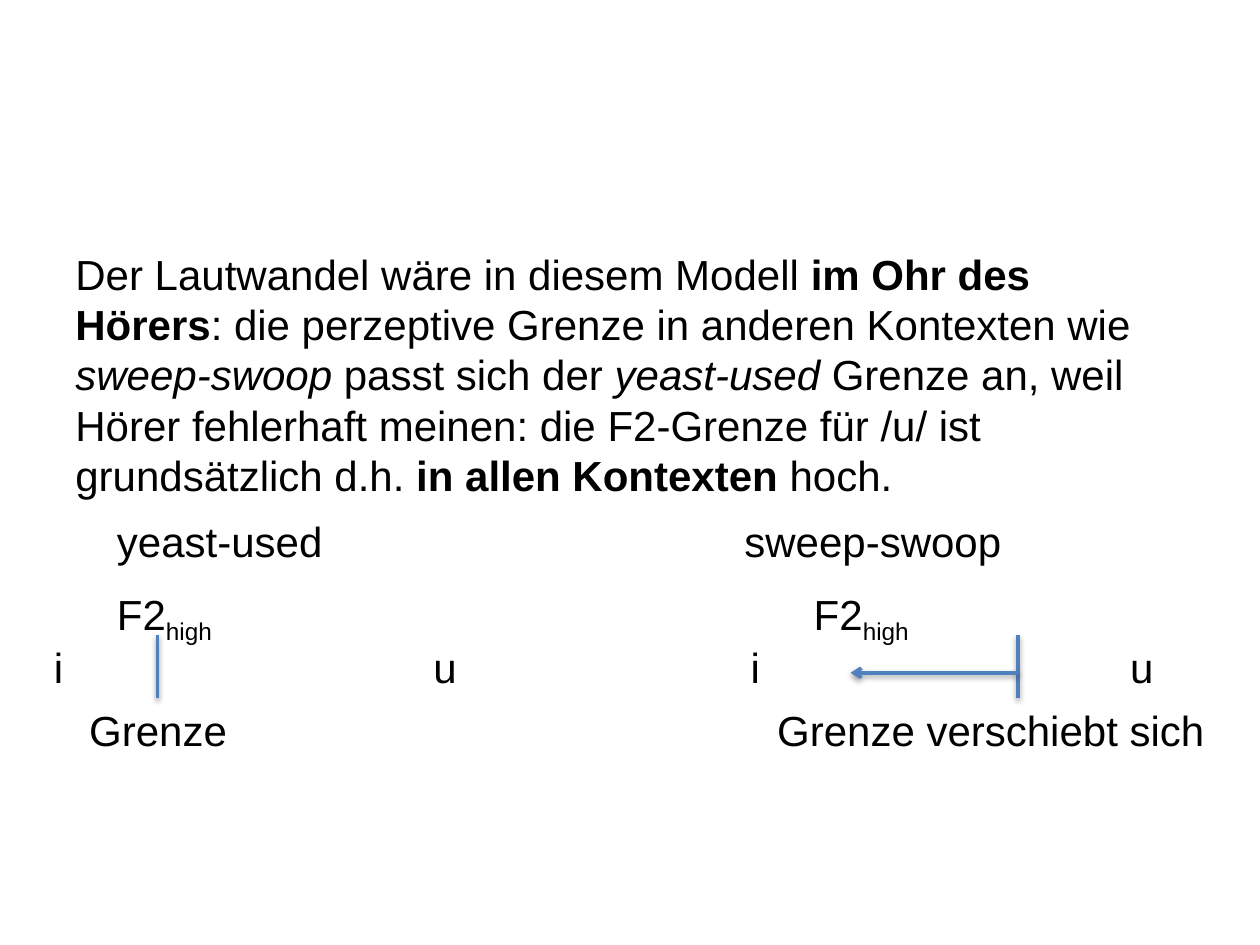
"""Build a slide on perceptual boundary shift between two vowel contexts."""
from dataclasses import dataclass

from lxml.etree import SubElement
from pptx import Presentation
from pptx.dml.color import RGBColor
from pptx.enum.shapes import MSO_CONNECTOR
from pptx.enum.text import MSO_AUTO_SIZE
from pptx.oxml import parse_xml
from pptx.oxml.ns import nsdecls, qn
from pptx.util import Inches, Pt


@dataclass(frozen=True)
class Theme:
    font: str = "Arial"
    size: Pt = Pt(24)
    ink: RGBColor = RGBColor(0x00, 0x00, 0x00)
    accent: RGBColor = RGBColor(0x4F, 0x81, 0xBD)
    stroke: Pt = Pt(2)


THEME = Theme()
STATEMENT = [
    ("Der Lautwandel wäre in diesem Modell ", ""),
    ("im Ohr des Hörers", "bold"),
    (": die perzeptive Grenze in anderen Kontexten wie ", ""),
    ("sweep-swoop ", "italic"),
    ("passt sich der ", ""),
    ("yeast-used ", "italic"),
    ("Grenze an, weil Hörer fehlerhaft meinen: die F2-Grenze für /u/ ist grundsätzlich d.h. ", ""),
    ("in allen Kontexten", "bold"),
    (" hoch.", ""),
]
FORMANT = [("F2", ""), ("high", "sub")]
ROWS = {"context": 4.04, "formant": 4.62, "vowel": 5.04, "caption": 5.54}
ROW_HEIGHT = 0.5
PANEL_LEFTS = (0.33, 5.86)
SHARED_LABELS = [
    ([("i", "")], "vowel", 0, 0.28),
    ([("u", "")], "vowel", 3.01, 0.39),
    (FORMANT, "formant", 0.5, 1.02),
]
PANELS = [
    {"context": ("yeast-used", 0.5, 1.85), "caption": ("Grenze", 0.28, 1.31), "boundary": 0.92},
    {"context": ("sweep-swoop", -0.05, 2.26), "caption": ("Grenze verschiebt sich", 0.21, 3.63),
     "boundary": 2.22, "shifted": 0.89},
]
SHADOW = (
    f'<a:effectLst {nsdecls("a")}><a:outerShdw blurRad="40000" dist="20000" dir="5400000" '
    'rotWithShape="0"><a:srgbClr val="000000"><a:alpha val="38000"/></a:srgbClr>'
    '</a:outerShdw></a:effectLst>'
)


def add_text(slide, runs, left, top, width, height=ROW_HEIGHT, wrap=False):
    frame = slide.shapes.add_textbox(*map(Inches, (left, top, width, height))).text_frame
    frame.word_wrap = wrap
    frame.auto_size = MSO_AUTO_SIZE.SHAPE_TO_FIT_TEXT
    paragraph = frame.paragraphs[0]
    paragraph.font.name, paragraph.font.size = THEME.font, THEME.size
    paragraph.font.color.rgb = THEME.ink
    for wording, style in runs:
        run = paragraph.add_run()
        run.text = wording
        if style == "sub":
            run._r.get_or_add_rPr().set("baseline", "-25000")
        elif style:
            setattr(run.font, style, True)


def add_line(slide, start, end, arrow=False):
    line = slide.shapes.add_connector(MSO_CONNECTOR.STRAIGHT, *map(Inches, (*start, *end)))
    line.line.color.rgb = THEME.accent
    line.line.width = THEME.stroke
    if arrow:
        SubElement(line.line._get_or_add_ln(), qn("a:tailEnd"), type="arrow")
    line._element.spPr.append(parse_xml(SHADOW))


def add_panel(slide, panel, left):
    for row in ("context", "caption"):
        wording, offset, width = panel[row]
        add_text(slide, [(wording, "")], left + offset, ROWS[row], width)
    for runs, row, offset, width in SHARED_LABELS:
        add_text(slide, runs, left + offset, ROWS[row], width)
    boundary = left + panel["boundary"]
    add_line(slide, (boundary, ROWS["vowel"]), (boundary, ROWS["caption"]))
    if "shifted" in panel:
        middle = ROWS["vowel"] + 0.6 * ROW_HEIGHT
        add_line(slide, (boundary, middle), (left + panel["shifted"], middle), arrow=True)


def main():
    deck = Presentation()
    deck.slide_width, deck.slide_height = Inches(10), Inches(7.5)
    slide = deck.slides.add_slide(deck.slide_layouts.get_by_name("Blank"))
    add_text(slide, STATEMENT, 0.5, 1.92, 8.58, 2.12, wrap=True)
    for panel, left in zip(PANELS, PANEL_LEFTS):
        add_panel(slide, panel, left)
    deck.save("out.pptx")


if __name__ == "__main__":
    main()
